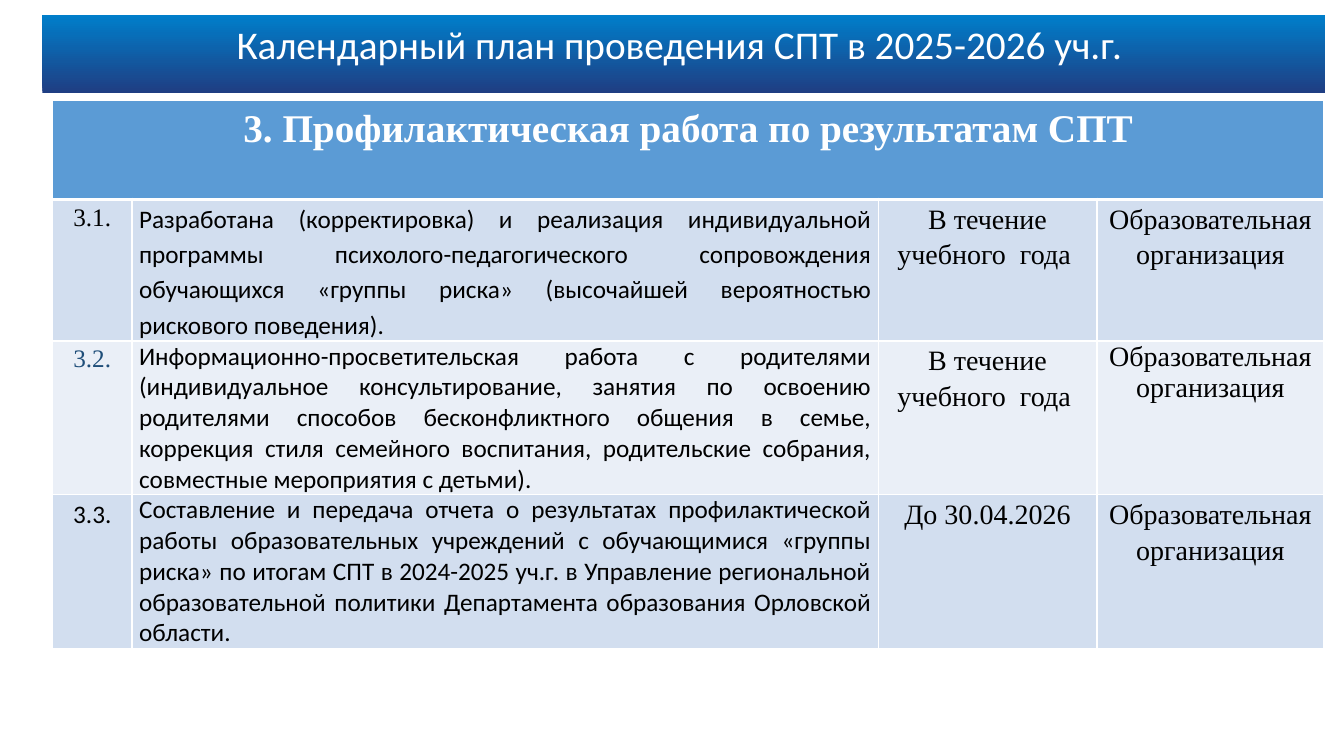
from dataclasses import dataclass

from lxml import etree
from pptx import Presentation
from pptx.dml.color import RGBColor
from pptx.enum.text import MSO_ANCHOR, MSO_AUTO_SIZE, PP_ALIGN
from pptx.oxml.ns import qn
from pptx.slide import Slide
from pptx.table import Table, _Cell
from pptx.util import Inches, Pt

CENTER = PP_ALIGN.CENTER
JUSTIFY = PP_ALIGN.JUSTIFY
TOP = MSO_ANCHOR.TOP
NO_AUTOFIT = MSO_AUTO_SIZE.NONE


@dataclass(frozen=True)
class Theme:
    sans: str = "Calibri"
    serif: str = "Times New Roman"
    heading_size: int = 28
    text_size: int = 18
    term_size: int = 20
    white: str = "FFFFFF"
    black: str = "000000"
    navy: str = "1F4E79"
    banner_bottom: str = "1F3E83"
    banner_top: str = "007ECA"
    header: str = "5B9BD5"
    bands: tuple[str, str] = ("D2DEEF", "EAEFF7")


THEME = Theme()


@dataclass(frozen=True)
class Entry:
    text: str
    size: int
    font: str = THEME.serif
    color: str = THEME.black
    bold: bool = False
    align: PP_ALIGN = CENTER
    spacing: float = 1.15


def number(text: str, font: str = THEME.serif, color: str = THEME.black) -> Entry:
    return Entry(text, THEME.text_size, font, color)


def task(text: str, spacing: float = 1.0) -> Entry:
    return Entry(text, THEME.text_size, THEME.sans, align=JUSTIFY, spacing=spacing)


def term(text: str, spacing: float = 1.15) -> Entry:
    return Entry(text, THEME.term_size, spacing=spacing)


TITLE = Entry("Календарный план проведения СПТ в 2025-2026 уч.г. ",
              THEME.heading_size, THEME.sans, THEME.white, spacing=1.0)
SECTION = Entry("3. Профилактическая работа по результатам СПТ",
                THEME.heading_size, color=THEME.white, bold=True)
SCHOOL = "Образовательная организация"
ALL_YEAR = "В течение учебного  года "
PLAN = [
    (number("3.1."),
     task("Разработана (корректировка) и реализация индивидуальной программы "
          "психолого-педагогического сопровождения обучающихся «группы риска» "
          "(высочайшей вероятностью рискового поведения). ", 1.15),
     term(ALL_YEAR), term(SCHOOL)),
    (number("3.2.", color=THEME.navy),
     task("Информационно-просветительская работа с родителями (индивидуальное "
          "консультирование, занятия по освоению родителями способов бесконфликтного "
          "общения в семье, коррекция стиля семейного воспитания, родительские "
          "собрания, совместные мероприятия с детьми)."),
     term(ALL_YEAR), term(SCHOOL, 1.0)),
    (number("3.3.", THEME.sans),
     task("Составление и передача отчета о результатах профилактической работы "
          "образовательных учреждений с обучающимися «группы риска» по итогам СПТ "
          "в 2024-2025 уч.г. в Управление региональной образовательной политики "
          "Департамента образования Орловской области."),
     term("До 30.04.2026"), term(SCHOOL)),
]
COLUMN_WIDTHS = (0.79, 7.4, 2.17, 2.25)
HEADER_HEIGHT = 0.98
ROW_HEIGHT = 1.03


def write(frame, entry: Entry) -> None:
    frame.text = entry.text
    para = frame.paragraphs[0]
    para.alignment = entry.align
    para.line_spacing = entry.spacing
    for span in para.runs:
        span.font.name = entry.font
        span.font.size = Pt(entry.size)
        span.font.bold = entry.bold
        span.font.color.rgb = RGBColor.from_string(entry.color)


def add_borders(cell: _Cell, top: int, bottom: int) -> None:
    properties = cell._tc.get_or_add_tcPr()
    for side, width in (("L", 1), ("R", 1), ("T", top), ("B", bottom)):
        line = etree.SubElement(properties, qn(f"a:ln{side}"), w=str(Pt(width)))
        fill = etree.SubElement(line, qn("a:solidFill"))
        etree.SubElement(fill, qn("a:srgbClr"), val=THEME.white)


def format_cell(cell: _Cell, fill: str, top: int = 1, bottom: int = 1) -> None:
    cell.margin_left = cell.margin_right = Inches(0.07)
    cell.margin_top = cell.margin_bottom = 0
    cell.vertical_anchor = TOP
    add_borders(cell, top, bottom)
    cell.fill.solid()
    cell.fill.fore_color.rgb = RGBColor.from_string(fill)


def add_banner(page: Slide) -> None:
    banner = page.shapes.title
    banner.left, banner.top = Inches(0.42), Inches(0.15)
    banner.width, banner.height = Inches(12.72), Inches(0.77)
    banner.fill.gradient()
    banner.fill.gradient_angle = 90
    colors = (THEME.banner_bottom, THEME.banner_top)
    for position, (stop, color) in enumerate(zip(banner.fill.gradient_stops, colors)):
        stop.position = position
        stop.color.rgb = RGBColor.from_string(color)
    frame = banner.text_frame
    frame.word_wrap = True
    frame.auto_size = NO_AUTOFIT
    frame.vertical_anchor = TOP
    write(frame, TITLE)


def add_plan(page: Slide) -> Table:
    height = HEADER_HEIGHT + ROW_HEIGHT * len(PLAN)
    table = page.shapes.add_table(
        len(PLAN) + 1, len(COLUMN_WIDTHS), Inches(0.52), Inches(1),
        Inches(sum(COLUMN_WIDTHS)), Inches(height)).table
    for column, width in zip(table.columns, COLUMN_WIDTHS):
        column.width = Inches(width)
    for index, row in enumerate(table.rows):
        row.height = Inches(ROW_HEIGHT if index else HEADER_HEIGHT)

    for cell in table.rows[0].cells:
        format_cell(cell, THEME.header, bottom=3)
    table.cell(0, 0).merge(table.cell(0, len(COLUMN_WIDTHS) - 1))
    write(table.cell(0, 0).text_frame, SECTION)

    for index, entries in enumerate(PLAN):
        for column, entry in enumerate(entries):
            cell = table.cell(index + 1, column)
            format_cell(cell, THEME.bands[index % 2], top=1 if index else 3)
            write(cell.text_frame, entry)
    return table


def main() -> None:
    deck = Presentation()
    deck.slide_width, deck.slide_height = Inches(13.33), Inches(7.5)
    page = deck.slides.add_slide(deck.slide_layouts.get_by_name("Title Only"))
    add_banner(page)
    add_plan(page)
    deck.save("out.pptx")


if __name__ == "__main__":
    main()
